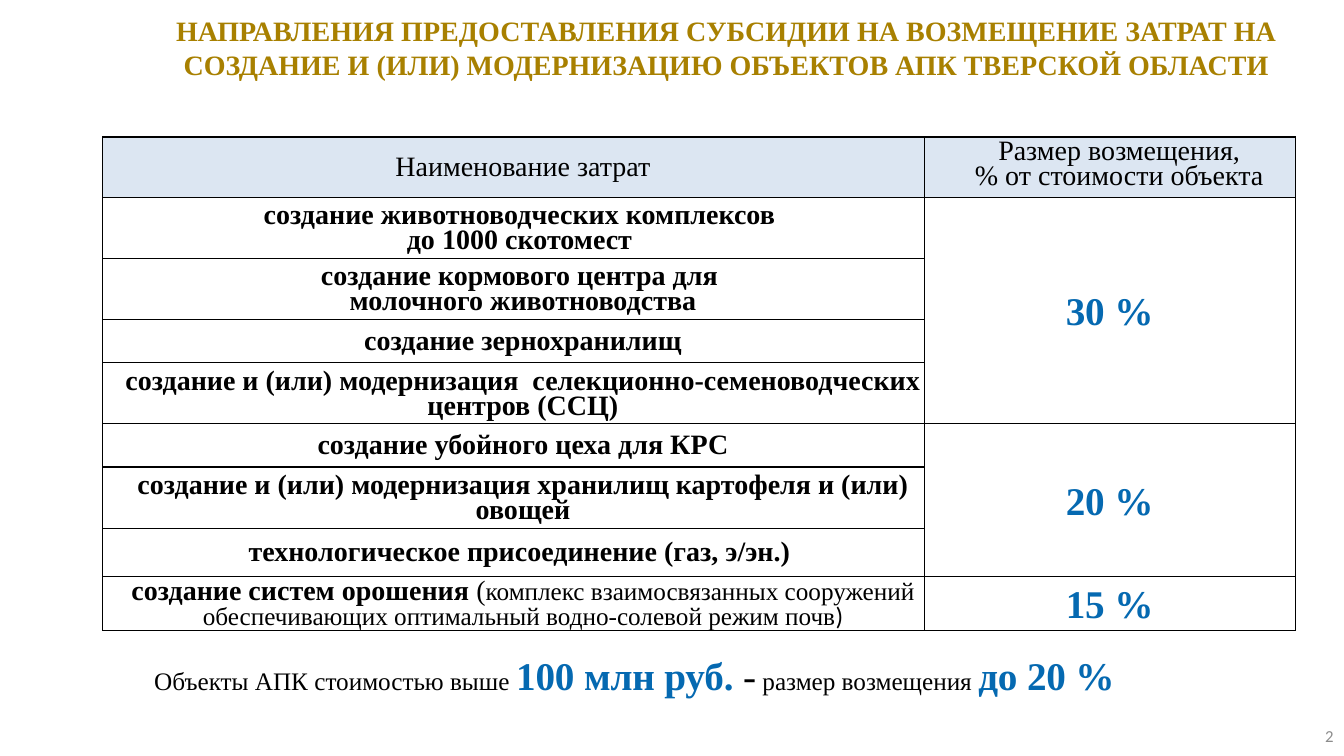
from dataclasses import dataclass

from lxml import etree
from pptx import Presentation
from pptx.dml.color import RGBColor
from pptx.enum.text import MSO_ANCHOR, PP_ALIGN
from pptx.oxml.ns import qn
from pptx.util import Cm, Pt

CENTER, LEFT, RIGHT = PP_ALIGN.CENTER, PP_ALIGN.LEFT, PP_ALIGN.RIGHT
TOP, MIDDLE = MSO_ANCHOR.TOP, MSO_ANCHOR.MIDDLE
SERIF, SANS = "Times New Roman", "Calibri"
BLACK, BLUE, GOLD, GRAY, PALE = "000000", "0569B1", "A88000", "8C8C8C", "DCE6F2"
COLUMN_WIDTHS = (20.7, 9.35)
ROW_HEIGHTS = (1.52, 1.54, 1.54, 1.09, 1.54, 1.09, 1.54, 1.22, 1.35)


@dataclass(frozen=True)
class Span:
    text: str
    size: float = 20
    color: str = BLACK
    bold: bool = False
    font: str = SERIF
    spacing: int = 0


@dataclass(frozen=True)
class Line:
    spans: tuple[Span, ...]
    alignment: PP_ALIGN = CENTER
    line_spacing: float | None = None
    space_before: float = 0
    indent: float = 0


@dataclass(frozen=True)
class Box:
    left: float
    top: float
    width: float
    height: float
    anchor: MSO_ANCHOR
    line: Line


@dataclass(frozen=True)
class Rate:
    first_row: int
    last_row: int
    number: str


def rgb(color: str) -> RGBColor:
    return RGBColor.from_string(color)


def cost_line(*spans: Span) -> Line:
    return Line(spans, line_spacing=0.8, indent=0.48)


def bold_lines(*texts: str) -> list[Line]:
    return [cost_line(Span(text, bold=True)) for text in texts]


def highlight(text: str, spacing: int = -10) -> Span:
    return Span(text, 28, BLUE, True, spacing=spacing)


HEADERS = (
    [cost_line(Span("Наименование затрат"))],
    [cost_line(Span("Размер возмещения,")), cost_line(Span("% от стоимости объекта"))],
)
COSTS = (
    bold_lines("создание животноводческих комплексов ", "до 1000 скотомест "),
    bold_lines("создание кормового центра для ", "молочного животноводства"),
    bold_lines("создание зернохранилищ"),
    bold_lines("создание и (или) модернизация  селекционно-семеноводческих центров (CCЦ)"),
    bold_lines("создание убойного цеха для КРС"),
    bold_lines("создание и (или) модернизация хранилищ картофеля и (или) овощей"),
    bold_lines("технологическое присоединение (газ, э/эн.) "),
    [cost_line(
        Span("создание систем орошения ", bold=True),
        Span("("),
        Span("комплекс взаимосвязанных сооружений обеспечивающих "
             "оптимальный водно-солевой режим почв", 18),
        Span(")", 18, font=SANS),
    )],
)
RATES = (Rate(1, 4, "30 "), Rate(5, 7, "20 "), Rate(8, 8, "15 "))
BOXES = (
    Box(3.48, 16.51, 30.15, 1.22, TOP, Line((
        Span(" Объекты АПК стоимостью выше ", 18),
        highlight("100 млн руб. "),
        Span("-", 28, spacing=-10),
        Span(" размер возмещения ", 18),
        highlight("до 20 %"),
    ), LEFT, 0.8)),
    Box(3.48, -0.03, 29.64, 2.46, MIDDLE, Line((
        Span("НАПРАВЛЕНИЯ ПРЕДОСТАВЛЕНИЯ СУБСИДИИ НА ВОЗМЕЩЕНИЕ ЗАТРАТ НА "
             "СОЗДАНИЕ И (ИЛИ) МОДЕРНИЗАЦИЮ ОБЪЕКТОВ АПК ТВЕРСКОЙ ОБЛАСТИ",
             color=GOLD, bold=True),
    ))),
    Box(26.24, 18.03, 7.62, 1.02, MIDDLE, Line((Span("2", 12, GRAY, font=SANS),), RIGHT)),
)


def write_lines(text_frame, lines: list[Line]) -> None:
    for index, line in enumerate(lines):
        paragraph = text_frame.add_paragraph() if index else text_frame.paragraphs[0]
        paragraph.alignment = line.alignment
        paragraph.line_spacing = line.line_spacing
        paragraph.space_before = Pt(line.space_before)
        properties = paragraph._p.get_or_add_pPr()
        properties.set("marL", str(Cm(line.indent)))
        properties.set("indent", "0")
        for span in line.spans:
            run = paragraph.add_run()
            run.text = span.text
            run.font.name = span.font
            run.font.size = Pt(span.size)
            run.font.bold = span.bold
            run.font.color.rgb = rgb(span.color)
            if span.spacing:
                run._r.get_or_add_rPr().set("spc", str(span.spacing))


def add_box(slide, box: Box) -> None:
    shape = slide.shapes.add_textbox(Cm(box.left), Cm(box.top), Cm(box.width), Cm(box.height))
    text_frame = shape.text_frame
    text_frame.word_wrap = True
    text_frame.vertical_anchor = box.anchor
    write_lines(text_frame, [box.line])


def style_cell(cell, fill: str | None) -> None:
    properties = cell._tc.get_or_add_tcPr()
    for side in ("lnL", "lnR", "lnT", "lnB"):
        border = etree.SubElement(properties, qn(f"a:{side}"), w=str(Pt(1)))
        solid = etree.SubElement(border, qn("a:solidFill"))
        etree.SubElement(solid, qn("a:srgbClr"), val=BLACK)
    if fill:
        cell.fill.solid()
        cell.fill.fore_color.rgb = rgb(fill)
    else:
        cell.fill.background()
    cell.margin_left = cell.margin_right = cell.margin_bottom = 0
    cell.margin_top = Cm(0.1)


def fill_cell(cell, lines: list[Line], anchor: MSO_ANCHOR = MIDDLE) -> None:
    cell.vertical_anchor = anchor
    write_lines(cell.text_frame, lines)


def add_costs_table(slide) -> None:
    table = slide.shapes.add_table(
        len(ROW_HEIGHTS), len(COLUMN_WIDTHS), Cm(2.59), Cm(3.45),
        Cm(sum(COLUMN_WIDTHS)), Cm(sum(ROW_HEIGHTS)),
    ).table
    table.first_row = table.horz_banding = False
    for column, width in zip(table.columns, COLUMN_WIDTHS):
        column.width = Cm(width)
    for index, (row, height) in enumerate(zip(table.rows, ROW_HEIGHTS)):
        row.height = Cm(height)
        for cell in row.cells:
            style_cell(cell, None if index else PALE)
    for column_index, (lines, anchor) in enumerate(zip(HEADERS, (MIDDLE, TOP))):
        fill_cell(table.cell(0, column_index), lines, anchor)
    for row_index, lines in enumerate(COSTS, start=1):
        fill_cell(table.cell(row_index, 0), lines)
    for rate in RATES:
        cell = table.cell(rate.first_row, 1)
        if rate.last_row > rate.first_row:
            cell.merge(table.cell(rate.last_row, 1))
        cell.margin_top = Cm(0.08)
        spans = (highlight(rate.number), highlight("%", -50))
        fill_cell(cell, [Line(spans)])


def main() -> None:
    presentation = Presentation()
    presentation.slide_width, presentation.slide_height = Cm(33.87), Cm(19.05)
    slide = presentation.slides.add_slide(presentation.slide_layouts[6])
    add_costs_table(slide)
    for box in BOXES:
        add_box(slide, box)
    presentation.save("out.pptx")


if __name__ == "__main__":
    main()
